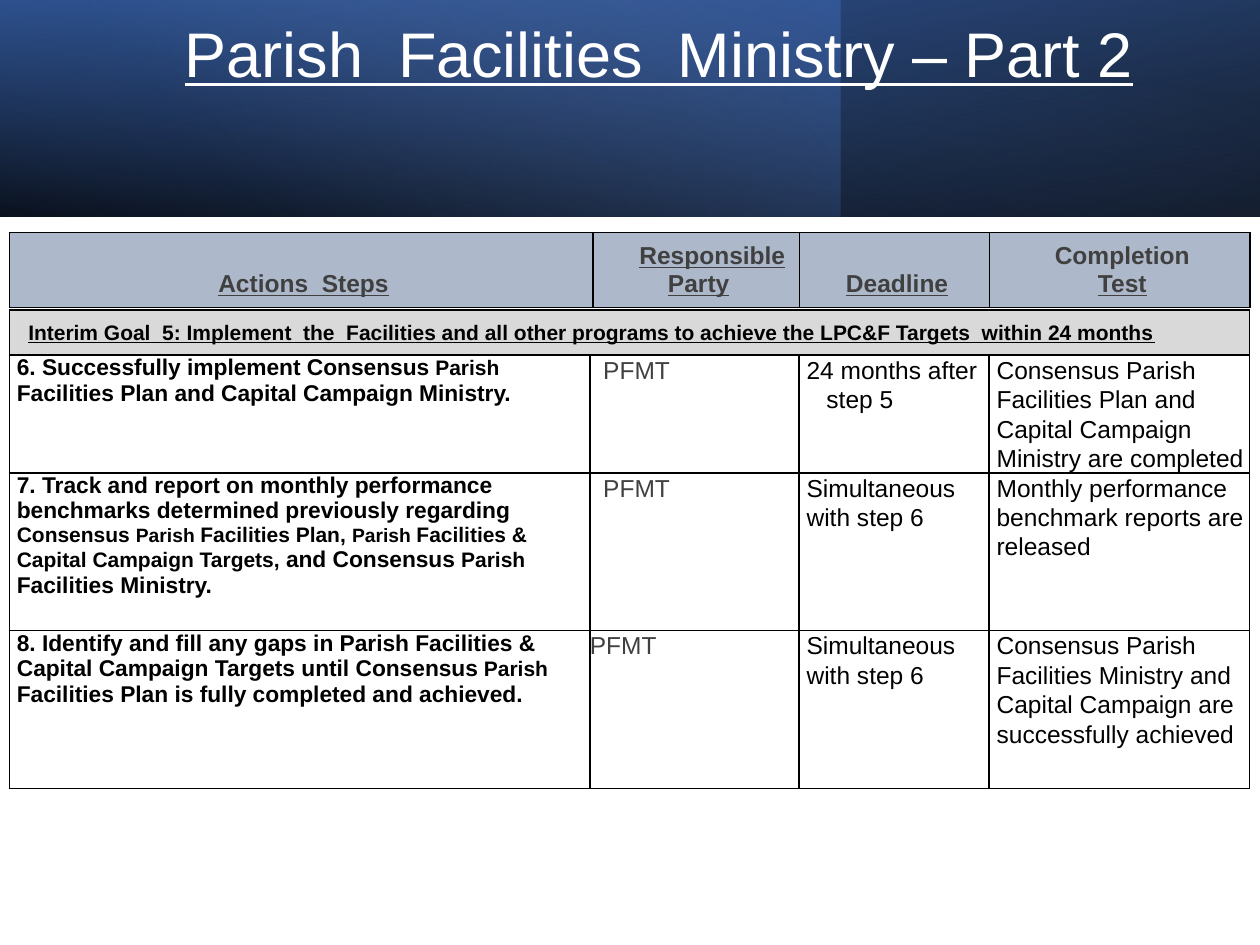
from lxml import etree
from pptx import Presentation
from pptx.dml.color import RGBColor
from pptx.enum import shapes, text
from pptx.oxml import parse_xml
from pptx.oxml.ns import nsdecls, qn
from pptx.util import Cm, Pt

# Content
TITLE = "Parish  Facilities  Ministry – Part 2"
# Each header is a list of paragraphs: (text, underlined, first-line indent in cm)
HEADS = [
    [("Actions  Steps", True, 0)],
    [("Responsible Party", True, 0.55)],
    [("Deadline", True, 0)],
    [("Completion", False, 0), ("Test", True, 0)],
]
GOAL = ("Interim Goal  5: Implement  the  Facilities and all other programs "
        "to achieve the LPC&F Targets  within 24 months")
# Step runs, then (text, left margin, first-line indent) of the other columns
STEPS = [
    ([("6. Successfully implement Consensus ", 13), ("Parish ", 12),
      ("Facilities Plan and Capital Campaign Ministry.", 13)],
     ("PFMT", 0.27, 0),
     ("24 months after step 5", 0.55, -0.4),
     ("Consensus Parish Facilities Plan and Capital Campaign "
      "Ministry are completed", 0.15, 0)),
    ([("7. Track and report on monthly performance benchmarks "
       "determined previously regarding ", 13),
      ("Consensus ", 12), ("Parish ", 11), ("Facilities Plan, ", 12),
      ("Parish ", 11), ("Facilities & Capital Campaign Targets, ", 12),
      ("and Consensus ", 13), ("Parish ", 12), ("Facilities Ministry.", 13)],
     ("PFMT", 0.27, 0),
     ("Simultaneous with step 6", 0.15, 0),
     ("Monthly performance benchmark reports are released", 0.15, 0)),
    ([("8. Identify and fill any gaps in Parish Facilities & Capital "
       "Campaign Targets until Consensus ", 13), ("Parish ", 12),
      ("Facilities Plan is fully completed and achieved.", 13)],
     ("PFMT", 0, 0),
     ("Simultaneous with step 6", 0.15, 0),
     ("Consensus Parish Facilities Ministry and Capital Campaign "
      "are successfully achieved", 0.15, 0)),
]
HUE = {"ink": "000000", "gray": "404040", "white": "FFFFFF", "head": "ADB9CA",
       "goal": "D9D9D9", "navy": "2F5597", "blue": "4472C4", "sky": "8FAADC"}
WIDE, HIGH, BAND = 25.4, 19.05, 4.37
# Band layers: width, turn, flipped, angle, stops (position, colour, opacity)
LAYERS = [
    (WIDE, 180, True, 100, [(0, "ink", 96), (100, "navy", 100)]),
    (16.94, 0, False, 140, [(0, "blue", 41), (74, "sky", 0)]),
    (WIDE, 0, True, 260, [(0, "ink", 63), (78, "blue", 15)]),
]
LEFT = 0.19
HEAD_COLS, STEP_COLS = [11.76, 4.17, 3.83, 5.25], [11.7, 4.22, 3.83, 5.25]
HEAD_ROWS, STEP_ROWS = [1.51], [0.91, 2.36, 3.18, 3.18]
PAD, NONE = (0.38, 0.2, 0.28, 0.2), (0, 0, 0, 0)


def add_run(para, words, size, hue="ink", bold=False, under=False):
    run = para.add_run()
    run.text = words
    font = run.font
    font.name, font.size, font.bold, font.underline = "Arial", Pt(size), bold, under
    font.color.rgb = RGBColor.from_string(HUE[hue])


def indent(para, left, first=0):
    props = para._p.get_or_add_pPr()
    props.set("marL", str(Cm(left)))
    props.set("indent", str(Cm(first)))


def add_layer(slide, width, turn, flip, angle, stops):
    box = slide.shapes.add_shape(shapes.MSO_SHAPE.RECTANGLE, 0, 0, Cm(width), Cm(BAND))
    box.shadow.inherit = False
    box.line.fill.background()
    box.rotation = turn
    props = box._element.spPr
    if flip:
        props.find(qn("a:xfrm")).set("flipH", "1")
    marks = "".join(
        f'<a:gs pos="{pos * 1000}"><a:srgbClr val="{HUE[hue]}">'
        f'<a:alpha val="{alpha * 1000}"/></a:srgbClr></a:gs>'
        for pos, hue, alpha in stops)
    props.find(qn("a:prstGeom")).addnext(parse_xml(
        f'<a:gradFill {nsdecls("a")} rotWithShape="1"><a:gsLst>{marks}</a:gsLst>'
        f'<a:lin ang="{angle * 60000}" scaled="0"/></a:gradFill>'))


def add_grid(slide, top, cols, rows):
    frame = slide.shapes.add_table(len(rows), len(cols), Cm(LEFT), Cm(top),
                                   Cm(sum(cols)), Cm(sum(rows)))
    grid = frame.table
    grid.first_row = grid.horz_banding = False
    for col, width in zip(grid.columns, cols):
        col.width = Cm(width)
    for row, height in zip(grid.rows, rows):
        row.height = Cm(height)
    return grid


def dress(cell, pad, hue=None):
    (cell.margin_left, cell.margin_top,
     cell.margin_right, cell.margin_bottom) = map(Cm, pad)
    if hue:
        cell.fill.solid()
        cell.fill.fore_color.rgb = RGBColor.from_string(HUE[hue])
    else:
        cell.fill.background()
    props = cell._tc.get_or_add_tcPr()
    for spot, side in enumerate(("lnL", "lnR", "lnT", "lnB")):
        line = etree.Element(qn(f"a:{side}"), w=str(Pt(1)))
        fill = etree.SubElement(line, qn("a:solidFill"))
        etree.SubElement(fill, qn("a:srgbClr"), val=HUE["ink"])
        props.insert(spot, line)


def main():
    deck = Presentation()
    deck.slide_width, deck.slide_height = Cm(WIDE), Cm(HIGH)
    slide = deck.slides.add_slide(deck.slide_layouts[5])

    # Shaded band
    for layer in LAYERS:
        add_layer(slide, *layer)

    # Column heads
    grid = add_grid(slide, 4.69, HEAD_COLS, HEAD_ROWS)
    for cell, lines in zip(grid.rows[0].cells, HEADS):
        dress(cell, PAD, "head")
        cell.vertical_anchor = text.MSO_ANCHOR.BOTTOM
        frame = cell.text_frame
        for spot, (words, under, first) in enumerate(lines):
            para = frame.add_paragraph() if spot else frame.paragraphs[0]
            para.alignment = text.PP_ALIGN.CENTER
            indent(para, 0, first)
            add_run(para, words, 14, "gray", True, under)

    # Goal row
    grid = add_grid(slide, 6.25, STEP_COLS, STEP_ROWS)
    for cell in grid.rows[0].cells:
        dress(cell, PAD, "goal")
    goal = grid.cell(0, 0)
    goal.merge(grid.cell(0, len(STEP_COLS) - 1))
    para = goal.text_frame.paragraphs[0]
    para.line_spacing = 1.07
    add_run(para, GOAL, 12, bold=True, under=True)

    # Step rows
    for row, (runs, *notes) in enumerate(STEPS, 1):
        cells = list(grid.rows[row].cells)
        for cell in cells:
            dress(cell, NONE)
        para = cells[0].text_frame.paragraphs[0]
        indent(para, 0.15)
        for words, size in runs:
            add_run(para, words, size, bold=True)
        for cell, (words, left, first) in zip(cells[1:], notes):
            para = cell.text_frame.paragraphs[0]
            para.line_spacing = 1.07
            indent(para, left, first)
            add_run(para, words, 14, "gray" if words == "PFMT" else "ink")

    # Title, brought in front of the band
    title = slide.shapes.title
    slide.shapes._spTree.append(title._element)
    title.left, title.top, title.width, title.height = map(Cm, (1.17, -0.46, 24.23, 3.23))
    frame = title.text_frame
    frame.word_wrap = True
    frame.auto_size = text.MSO_AUTO_SIZE.NONE
    frame.vertical_anchor = text.MSO_ANCHOR.MIDDLE
    para = frame.paragraphs[0]
    para.alignment = text.PP_ALIGN.CENTER
    para.line_spacing, para.space_after = 0.9, Pt(6)
    add_run(para, TITLE, 36, "white", under=True)

    deck.save("out.pptx")


if __name__ == "__main__":
    main()
